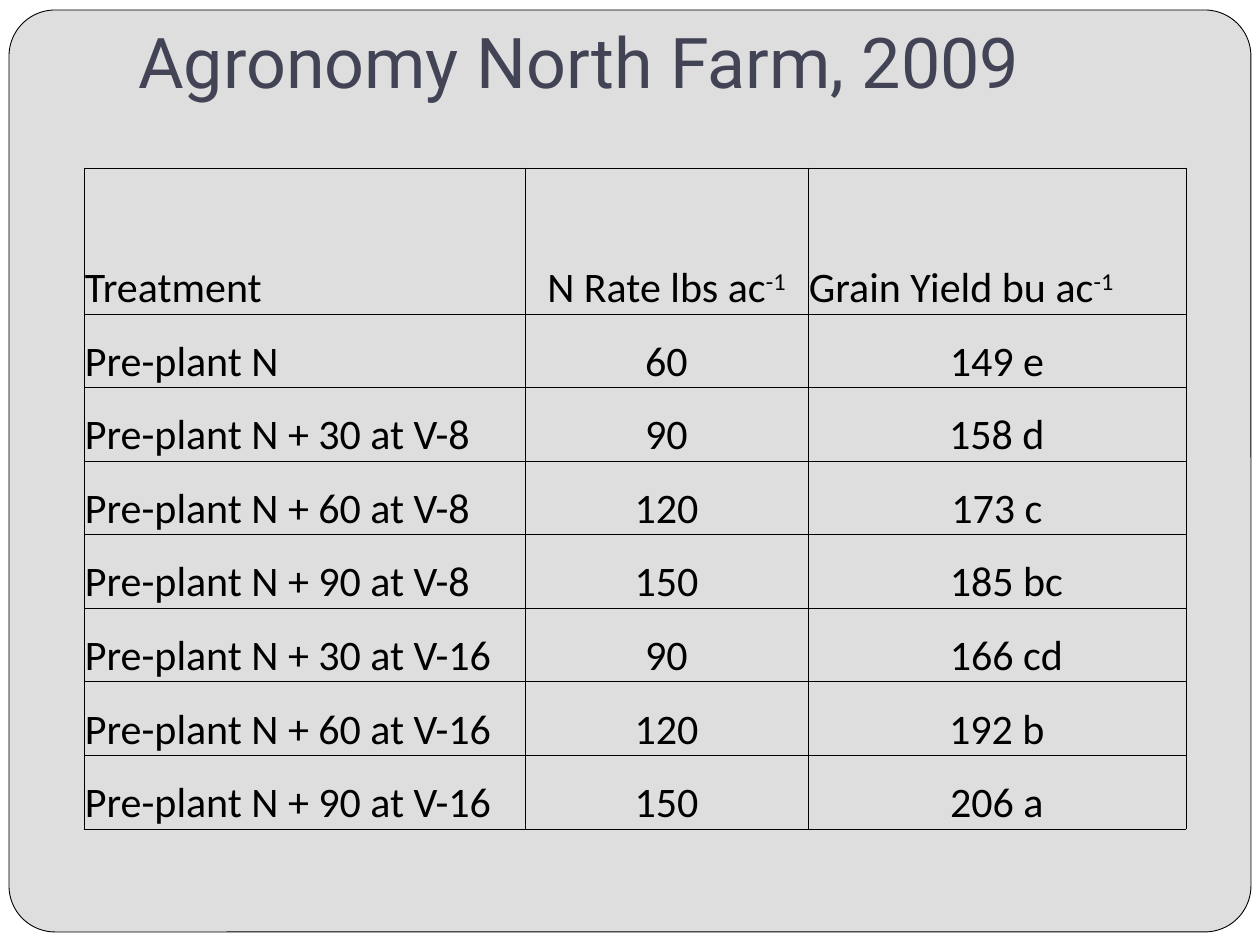
from lxml import etree
from pptx import Presentation
from pptx.dml.color import RGBColor
from pptx.enum.shapes import MSO_SHAPE
from pptx.enum.text import MSO_ANCHOR, PP_ALIGN
from pptx.oxml.ns import qn
from pptx.util import Pt

RECT, ROUND = MSO_SHAPE.RECTANGLE, MSO_SHAPE.ROUNDED_RECTANGLE
BOTTOM = MSO_ANCHOR.BOTTOM
LEFT, CENTER = PP_ALIGN.LEFT, PP_ALIGN.CENTER
WHITE = RGBColor(0xFF, 0xFF, 0xFF)
GRAY = RGBColor(0xDE, 0xDE, 0xDE)
BLACK = RGBColor(0, 0, 0)
SLATE = RGBColor(0x42, 0x44, 0x56)
SCALE = 914400 / 126  # EMU per px


def px(*nums):
    return [round(n * SCALE) for n in nums]


def add_run(para, text, font, size, color):
    run = para.add_run()
    run.text = text
    run.font.name = font
    run.font.size = Pt(size)
    run.font.color.rgb = color
    return run


deck = Presentation()
deck.slide_width, deck.slide_height = px(1260, 945)
slide = deck.slides.add_slide(deck.slide_layouts[6])
slide.background.fill.solid()
slide.background.fill.fore_color.rgb = GRAY

# White page with a rounded gray panel
page = slide.shapes.add_shape(RECT, *px(0, 0, 1260, 945))
panel = slide.shapes.add_shape(ROUND, *px(9, 10, 1242, 922))
panel.adjustments[0] = 0.05
for shape, color in ((page, WHITE), (panel, GRAY)):
    shape.shadow.inherit = False
    shape.fill.solid()
    shape.fill.fore_color.rgb = color
page.line.fill.background()
panel.line.color.rgb = BLACK
panel.line.width = Pt(0.5)

# Title
title = slide.shapes.add_textbox(*px(126, 0, 1071, 116)).text_frame
title.word_wrap = True
title.vertical_anchor = BOTTOM
title.margin_bottom = px(13)[0]
add_run(title.paragraphs[0], "Agronomy North Farm, 2009", "Roboto", 40, SLATE)

# Yield table: a trailing "^" part is set as superscript
ROWS = [
    ("Treatment", "N Rate lbs ac^-1", "Grain Yield bu ac^-1"),
    ("Pre-plant N", "60", "149 e"),
    ("Pre-plant N + 30 at V-8", "90", "158 d"),
    ("Pre-plant N + 60 at V-8", "120", "173 c"),
    ("Pre-plant N + 90 at V-8", "150", "185 bc"),
    ("Pre-plant N + 30 at V-16", "90", "166 cd"),
    ("Pre-plant N + 60 at V-16", "120", "192 b"),
    ("Pre-plant N + 90 at V-16", "150", "206 a"),
]
WIDTHS = (441, 283, 378)
HIGH, HEAD = 661, 146
STEP = (HIGH - HEAD) / (len(ROWS) - 1)

frame = slide.shapes.add_table(len(ROWS), len(WIDTHS), *px(84, 168, sum(WIDTHS), HIGH))
table = frame.table
table.first_row = table.horz_banding = False
for col, wide in zip(table.columns, px(*WIDTHS)):
    col.width = wide

for r, row in enumerate(ROWS):
    table.rows[r].height = px(STEP if r else HEAD)[0]
    for c, text in enumerate(row):
        cell = table.cell(r, c)
        cell.vertical_anchor = BOTTOM
        cell.margin_left = cell.margin_right = cell.margin_top = px(1)[0]
        cell.margin_bottom = 0
        # Two-letter groups are indented so the numbers line up
        if c == 2 and text.endswith(("bc", "cd")):
            cell.margin_left = px(20)[0]

        # Thin black border on each side
        props = cell._tc.get_or_add_tcPr()
        for side in ("lnL", "lnR", "lnT", "lnB"):
            line = etree.SubElement(props, qn("a:" + side), w=str(Pt(0.5)))
            fill = etree.SubElement(line, qn("a:solidFill"))
            etree.SubElement(fill, qn("a:srgbClr"), val=str(BLACK))
        cell.fill.background()

        para = cell.text_frame.paragraphs[0]
        para.alignment = LEFT if c == 0 or (r == 0 and c == 2) else CENTER
        base, _, power = text.partition("^")
        add_run(para, base, "Calibri", 24, BLACK)
        if power:
            run = add_run(para, power, "Calibri", 24, BLACK)
            run.font._element.set("baseline", "30000")

deck.save("out.pptx")
